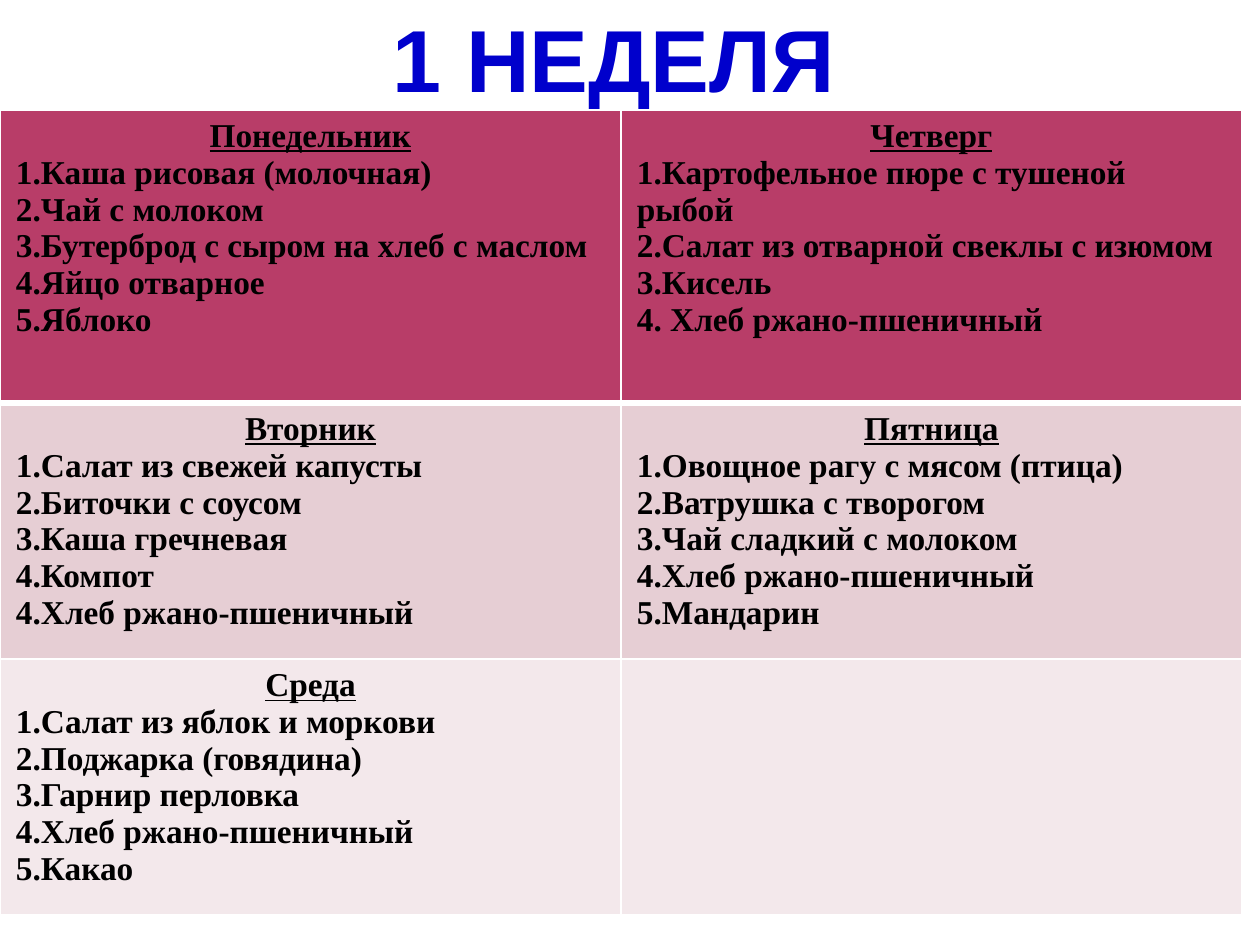
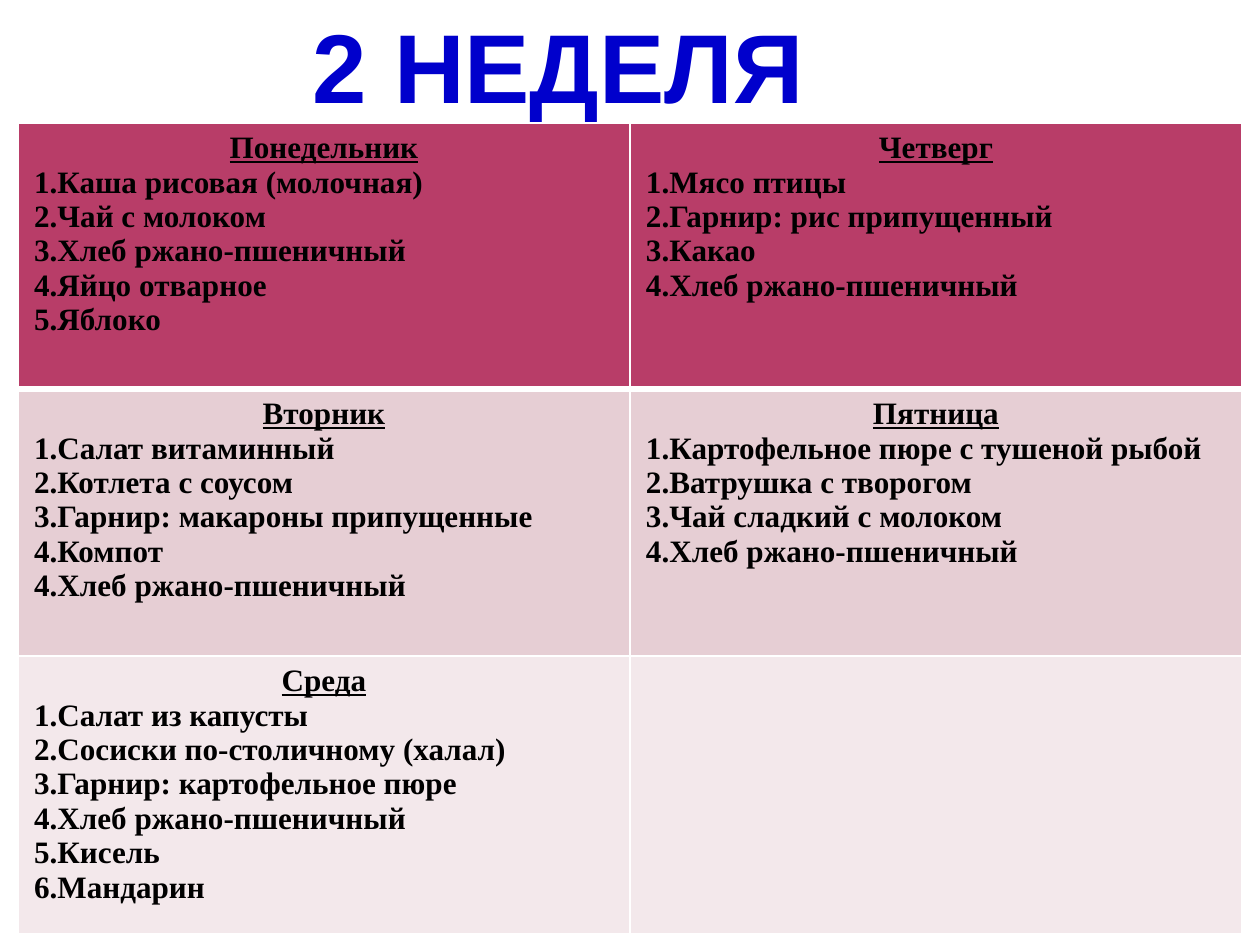
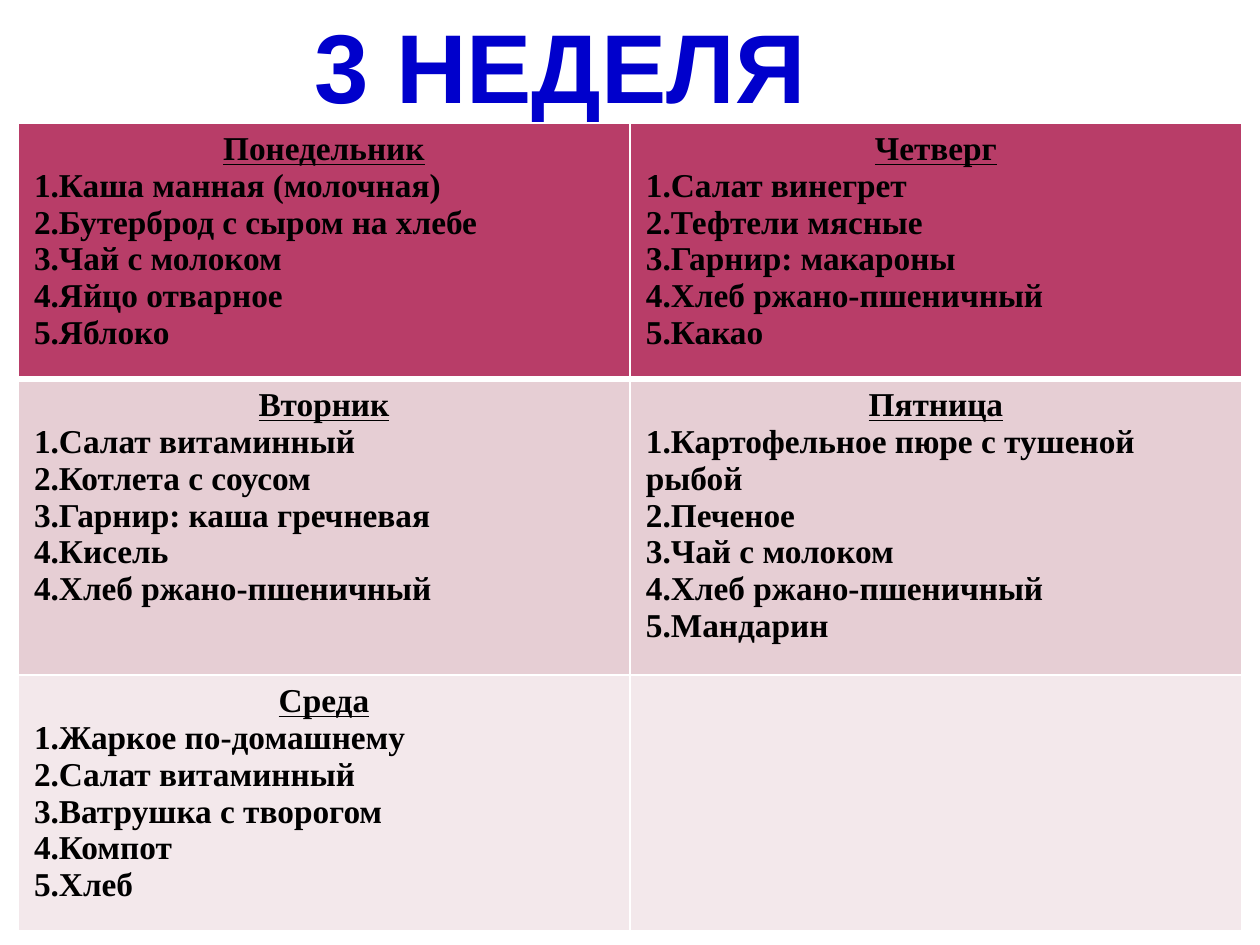
from dataclasses import dataclass

from lxml.etree import SubElement
from pptx import Presentation
from pptx.dml.color import RGBColor
from pptx.enum.text import MSO_ANCHOR, PP_ALIGN
from pptx.oxml import parse_xml
from pptx.oxml.ns import nsdecls, qn
from pptx.slide import Slide
from pptx.table import _Cell
from pptx.util import Emu, Pt

PX = 5715
SLIDE_W, SLIDE_H = 1260, 945


@dataclass(frozen=True)
class Theme:
    """Colours, fonts and line widths shared by all slides."""
    title: str = "0000CC"
    outline: str = "5E1A50"
    ink: str = "000000"
    border: str = "FFFFFF"
    row_fills: tuple[str, ...] = ("B83D68", "E6CED4", "F3E8EB")
    title_font: str = "Arial"
    body_font: str = "Times New Roman"
    outline_emu: int = 500
    thin: float = 1
    thick: float = 3


@dataclass(frozen=True)
class Week:
    """One week's menu with its layout in px and type sizes in points."""
    title: str
    title_left: int
    title_w: int
    title_indent: int
    title_size: float
    left: int
    top: int
    col_w: int
    row_heights: tuple[int, ...]
    size: float
    menus: tuple[tuple[str, ...], ...]


THEME = Theme()
DAYS = ("Понедельник", "Вторник", "Среда", "Четверг", "Пятница")
WEEKS = (
    Week("1 НЕДЕЛЯ", 30, 1101, 67, 39.6, 0, 110, 621, (293, 253, 253), 15, (
        ("1.Каша рисовая (молочная)", "2.Чай с молоком",
         "3.Бутерброд с сыром на хлеб с маслом", "4.Яйцо отварное", "5.Яблоко"),
        ("1.Салат из свежей капусты", "2.Биточки с соусом", "3.Каша гречневая",
         "4.Компот", "4.Хлеб ржано-пшеничный"),
        ("1.Салат из яблок и моркови", "2.Поджарка (говядина)", "3.Гарнир перловка",
         "4.Хлеб ржано-пшеничный", "5.Какао"),
        ("1.Картофельное пюре с тушеной рыбой", "2.Салат из отварной свеклы с изюмом",
         "3.Кисель", "4. Хлеб ржано-пшеничный"),
        ("1.Овощное рагу с мясом (птица)", "2.Ватрушка с творогом",
         "3.Чай сладкий с молоком", "4.Хлеб ржано-пшеничный", "5.Мандарин"),
    )),
    Week("2 НЕДЕЛЯ", 0, 1117, 0, 44, 18, 123, 612, (266, 267, 266), 14, (
        ("1.Каша рисовая (молочная)", "2.Чай с молоком", "3.Хлеб ржано-пшеничный",
         "4.Яйцо отварное", "5.Яблоко"),
        ("1.Салат витаминный", "2.Котлета с соусом", "3.Гарнир: макароны припущенные",
         "4.Компот", "4.Хлеб ржано-пшеничный"),
        ("1.Салат из капусты", "2.Сосиски по-столичному (халал)",
         "3.Гарнир: картофельное пюре", "4.Хлеб ржано-пшеничный", "5.Кисель", "6.Мандарин"),
        ("1.Мясо птицы", "2.Гарнир: рис припущенный", "3.Какао", "4.Хлеб ржано-пшеничный"),
        ("1.Картофельное пюре с тушеной рыбой", "2.Ватрушка с творогом",
         "3.Чай сладкий с молоком", "4.Хлеб ржано-пшеничный"),
    )),
    Week("3 НЕДЕЛЯ", 62, 997, 0, 44, 18, 123, 612, (253, 293, 253), 15, (
        ("1.Каша манная (молочная)", "2.Бутерброд с сыром на хлебе", "3.Чай с молоком",
         "4.Яйцо отварное", "5.Яблоко"),
        ("1.Салат витаминный", "2.Котлета с соусом", "3.Гарнир: каша гречневая",
         "4.Кисель", "4.Хлеб ржано-пшеничный"),
        ("1.Жаркое по-домашнему", "2.Салат витаминный", "3.Ватрушка с творогом",
         "4.Компот", "5.Хлеб"),
        ("1.Салат винегрет", "2.Тефтели мясные", "3.Гарнир: макароны",
         "4.Хлеб ржано-пшеничный", "5.Какао"),
        ("1.Картофельное пюре с тушеной рыбой", "2.Печеное", "3.Чай с молоком",
         "4.Хлеб ржано-пшеничный", "5.Мандарин"),
    )),
)


def px(n: int) -> Emu:
    """Turn px into EMU."""
    return Emu(n * PX)


def style_run(r, font: str, size: float, color: str) -> None:
    """Give a run its bold typeface, size and colour."""
    r.font.name = font
    r.font.size = Pt(size)
    r.font.bold = True
    r.font.color.rgb = RGBColor.from_string(color)


def solid_line(tag: str, width: int, color: str):
    """Build a solid line element."""
    ln = parse_xml(f'<a:{tag} {nsdecls("a")} w="{width}"><a:solidFill/></a:{tag}>')
    SubElement(ln[0], qn("a:srgbClr"), val=color)
    return ln


def add_title(s: Slide, week: Week) -> None:
    """Draw the outlined week title above the table."""
    sp = s.shapes.add_textbox(px(week.title_left), 0, px(week.title_w), px(week.top))
    tf = sp.text_frame
    tf.word_wrap = True
    tf.vertical_anchor = MSO_ANCHOR.BOTTOM
    tf.margin_left = tf.margin_right = px(6)
    tf.margin_top = tf.margin_bottom = 0
    tf.text = week.title
    p = tf.paragraphs[0]
    p.alignment = PP_ALIGN.CENTER
    if week.title_indent:
        p._p.get_or_add_pPr().set("marL", str(px(week.title_indent)))
    r = p.runs[0]
    style_run(r, THEME.title_font, week.title_size, THEME.title)
    r.font._element.insert(0, solid_line("ln", THEME.outline_emu, THEME.outline))


def style_cell(cell: _Cell, row: int) -> None:
    """Fill a cell and rule its borders, heavier under the first row."""
    cell.fill.solid()
    cell.fill.fore_color.rgb = RGBColor.from_string(THEME.row_fills[row])
    top = THEME.thick if row == 1 else THEME.thin
    bottom = THEME.thick if row == 0 else THEME.thin
    sides = (("lnL", THEME.thin), ("lnR", THEME.thin), ("lnT", top), ("lnB", bottom))
    for i, (tag, width) in enumerate(sides):
        cell._tc.get_or_add_tcPr().insert(i, solid_line(tag, Pt(width), THEME.border))


def write_day(cell: _Cell, day: str, dishes: tuple[str, ...], size: float) -> None:
    """Write an underlined day name and its dishes."""
    tf = cell.text_frame
    tf.text = "\n".join((day, *dishes))
    for p in tf.paragraphs:
        style_run(p.runs[0], THEME.body_font, size, THEME.ink)
    heading = tf.paragraphs[0]
    heading.alignment = PP_ALIGN.CENTER
    heading.runs[0].font.underline = True


def add_menu(s: Slide, week: Week) -> None:
    """Draw the menu table, its days running down each column."""
    rows, cols = len(week.row_heights), 2
    frame = s.shapes.add_table(rows, cols, px(week.left), px(week.top),
                               px(cols * week.col_w), px(sum(week.row_heights)))
    table = frame.table
    for column in table.columns:
        column.width = px(week.col_w)
    for i, height in enumerate(week.row_heights):
        table.rows[i].height = px(height)
        for j in range(cols):
            style_cell(table.cell(i, j), i)
    for i, (day, dishes) in enumerate(zip(DAYS, week.menus)):
        write_day(table.cell(i % rows, i // rows), day, dishes, week.size)


def main() -> None:
    """Build one slide per week and save the deck."""
    prs = Presentation()
    prs.slide_width, prs.slide_height = px(SLIDE_W), px(SLIDE_H)
    for week in WEEKS:
        s = prs.slides.add_slide(prs.slide_layouts[6])
        add_title(s, week)
        add_menu(s, week)
    prs.save("out.pptx")


if __name__ == "__main__":
    main()
